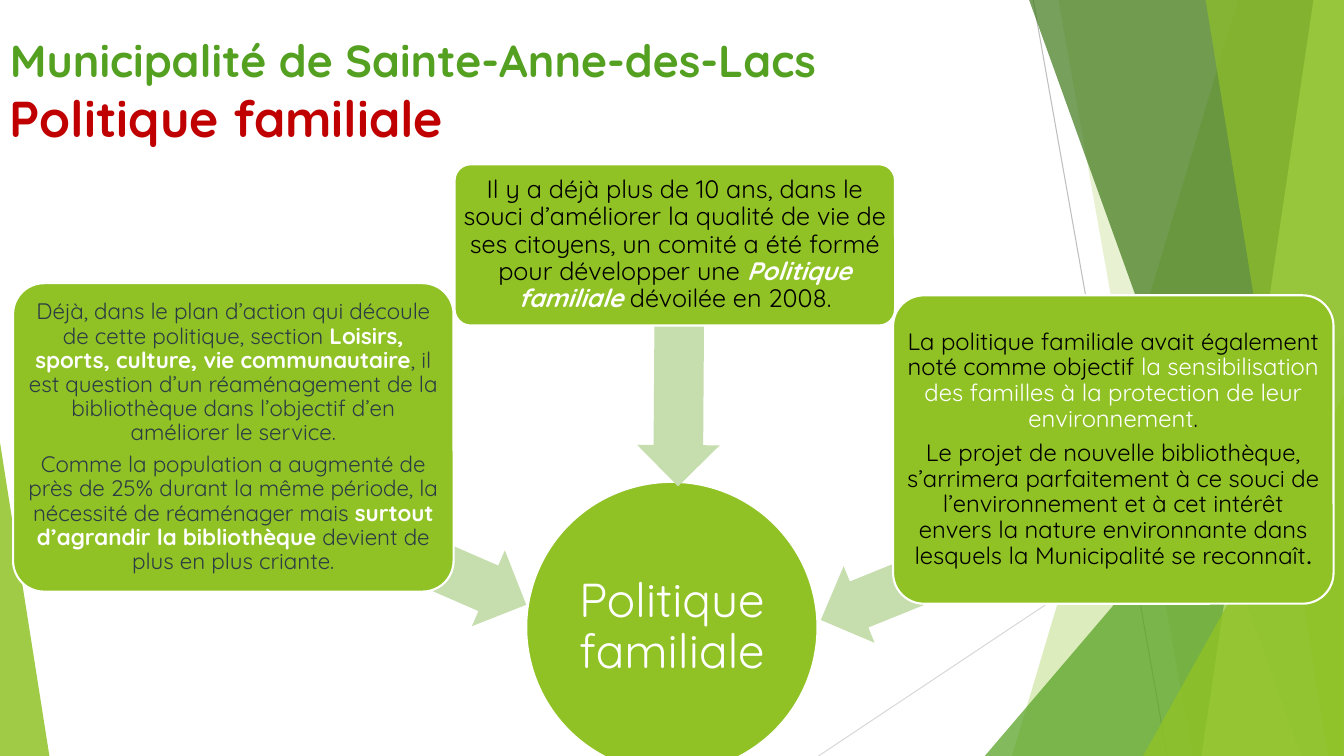
import dataclasses

import lxml.etree
import pptx
import pptx.dml.color
import pptx.enum.shapes
import pptx.enum.text
import pptx.oxml.ns
import pptx.util

Kind = pptx.enum.shapes.MSO_SHAPE
Align = pptx.enum.text.PP_ALIGN
Anchor = pptx.enum.text.MSO_ANCHOR


@dataclasses.dataclass(frozen=True)
class Theme:
    font: str = "Quicksand"
    lime: str = "90C226"
    leaf: str = "54A021"
    moss: str = "3F7819"
    pale: str = "C0E474"
    mint: str = "C6DDAD"
    red: str = "C00000"
    slate: str = "2C3C43"
    black: str = "000000"
    white: str = "FFFFFF"
    gray: str = "BFBFBF"
    mist: str = "D9D9D9"
    head: int = 32
    title: int = 36
    hub: int = 34
    left: int = 16
    top: int = 18
    right: int = 17
    hair: float = 0.75
    edge: float = 1.5


def tint(code):
    return pptx.dml.color.RGBColor.from_string(code)


def write(par, text, size, color, font, bold=False, italic=False):
    run = par.add_run()
    run.text = text
    run.font.name = font
    run.font.size = pptx.util.Pt(size)
    run.font.color.rgb = tint(color)
    run.font.bold = bold
    run.font.italic = italic


class Board:
    cols, rows = 133.33, 75
    cell = pptx.util.Inches(0.1)

    def __init__(self, theme):
        self.theme = theme
        self.deck = pptx.Presentation()
        self.deck.slide_width = self.span(self.cols)
        self.deck.slide_height = self.span(self.rows)
        self.slide = self.deck.slides.add_slide(self.deck.slide_layouts[6])
        self.shapes = self.slide.shapes

    def span(self, cells):
        return round(cells * self.cell)

    def paint(self, shape, color, alpha=100, edge=None):
        shape.shadow.inherit = False
        shape.fill.solid()
        shape.fill.fore_color.rgb = tint(color)
        if alpha < 100:
            tag = pptx.oxml.ns.qn("a:srgbClr")
            node = next(shape.fill._xPr.iter(tag))
            lxml.etree.SubElement(node, pptx.oxml.ns.qn("a:alpha"), val=str(alpha * 1000))
        if edge:
            shape.line.color.rgb = tint(edge)
            shape.line.width = pptx.util.Pt(self.theme.edge)
        else:
            shape.line.fill.background()

    def line(self, start, end, color):
        link = self.shapes.add_connector(
            pptx.enum.shapes.MSO_CONNECTOR.STRAIGHT, *map(self.span, start + end))
        link.line.color.rgb = tint(color)
        link.line.width = pptx.util.Pt(self.theme.hair)
        lxml.etree.SubElement(link._element.spPr, pptx.oxml.ns.qn("a:effectLst"))

    def panel(self, top, base, color, alpha):
        points = [(self.cols, 0), (self.cols, self.rows), (base, self.rows)]
        pen = self.shapes.build_freeform(self.span(top), 0)
        pen.add_line_segments([tuple(map(self.span, point)) for point in points])
        self.paint(pen.convert_to_shape(), color, alpha)

    def shape(self, kind, area, color, adjust=(), turn=0, alpha=100, edge=None):
        item = self.shapes.add_shape(kind, *map(self.span, area))
        for spot, value in enumerate(adjust):
            item.adjustments[spot] = value
        item.rotation = turn
        self.paint(item, color, alpha, edge)
        return item

    def wedge(self, left, width, height, tip, color, alpha):
        area = (left, self.rows - height, width, height)
        self.shape(Kind.ISOSCELES_TRIANGLE, area, color, [tip], alpha=alpha)

    def arrow(self, left, top, width, turn):
        self.shape(Kind.LEFT_ARROW, (left, top, width, 8.2), self.theme.mint, [0.6, 0.5], turn)

    def title(self, area, parts):
        box = self.shapes.add_textbox(*map(self.span, area))
        box.text_frame.word_wrap = True
        par = box.text_frame.paragraphs[0]
        for spot, (text, size, color) in enumerate(parts):
            if spot:
                par.add_line_break()
            write(par, text, size, color, self.theme.font, bold=True)

    def fill(self, shape, pars, size, color, inset):
        frame = shape.text_frame
        frame.word_wrap = True
        frame.vertical_anchor = Anchor.MIDDLE
        frame.margin_left = frame.margin_right = self.span(inset)
        frame.margin_top = frame.margin_bottom = self.span(inset)
        for spot, parts in enumerate(pars):
            par = frame.add_paragraph() if spot else frame.paragraphs[0]
            par.alignment = Align.CENTER
            par.line_spacing = 0.9
            par.space_after = pptx.util.Pt(0.35 * size)
            for text, style in parts:
                base = dict(size=size, color=color, font=self.theme.font)
                write(par, text, **{**base, **style})

    def card(self, left, top, height, pars, size, color, inset):
        item = self.shape(Kind.ROUNDED_RECTANGLE, (left, top, 43.7, height),
                          self.theme.lime, [0.1], edge=self.theme.white)
        self.fill(item, pars, size, color, inset)

    def hub(self, left, top, width, text):
        item = self.shape(Kind.OVAL, (left, top, width, width),
                          self.theme.lime, edge=self.theme.white)
        self.fill(item, [[(text, {})]], self.theme.hub, self.theme.white, 0.2)

    def save(self):
        self.deck.save("out.pptx")


def main():
    theme = Theme()
    board = Board(theme)
    plain = {}
    light = dict(color=theme.white)
    strong = dict(color=theme.white, bold=True)

    board.line((102.5, 0), (115.8, 75), theme.gray)
    board.line((133.3, 40.3), (81.2, 75), theme.mist)
    board.panel(122.8, 100.4, theme.lime, 30)
    board.panel(105, 118.3, theme.lime, 20)
    board.wedge(97.7, 35.6, 41.7, 1, theme.leaf, 72)
    board.panel(102.1, 129.1, theme.moss, 70)
    board.panel(130.3, 119.2, theme.pale, 70)
    board.panel(119.6, 131.8, theme.lime, 65)
    board.wedge(113.4, 19.9, 35.7, 1, theme.lime, 80)
    board.wedge(0, 4.9, 31.1, 0, theme.lime, 85)

    board.title((0, 2.8, 94, 14.4), [
        ("Municipalité de Sainte-Anne-des-Lacs", theme.head, theme.leaf),
        ("Politique familiale", theme.title, theme.red)])

    board.hub(52.2, 47.8, 28.9, "Politique familiale")
    board.arrow(22.4, 49.7, 31.1, 203.5)
    board.card(1.3, 28.1, 30.6, [
        [("Déjà, dans le plan d’action qui découle de cette politique, section ", plain),
         ("Loisirs, sports, culture, vie communautaire", strong),
         (", il est question d’un réaménagement de la bibliothèque dans l’objectif "
          "d’en améliorer le service.", plain)],
        [("Comme la population a augmenté de près de 25% durant la même période, "
          "la nécessité de réaménager mais ", plain),
         ("surtout d’agrandir la bibliothèque", strong),
         (" devient de plus en plus criante.", plain)],
    ], theme.left, theme.slate, 0.3)
    board.arrow(56.2, 33, 22.3, 270.4)
    board.card(45.1, 16.3, 16, [
        [("Il y a déjà plus de 10 ans, dans le souci d’améliorer la qualité de vie de ses "
          "citoyens, un comité a été formé pour développer une ", plain),
         ("Politique familiale", dict(strong, italic=True)),
         (" dévoilée en 2008.", plain)],
    ], theme.top, theme.black, 0.4)
    board.arrow(80.3, 51.6, 31, 338)
    board.card(88.6, 29.3, 30.6, [
        [("La politique familiale avait également noté comme objectif ", plain),
         ("la sensibilisation des familles à la protection de leur environnement", light),
         (".", plain)],
        [("Le projet de nouvelle bibliothèque, s’arrimera parfaitement à ce souci de "
          "l’environnement et à cet intérêt envers la nature environnante dans lesquels "
          "la Municipalité se reconnaît", plain),
         (".", dict(font="Lato"))],
    ], theme.right, theme.black, 0.4)
    board.save()


if __name__ == "__main__":
    main()
